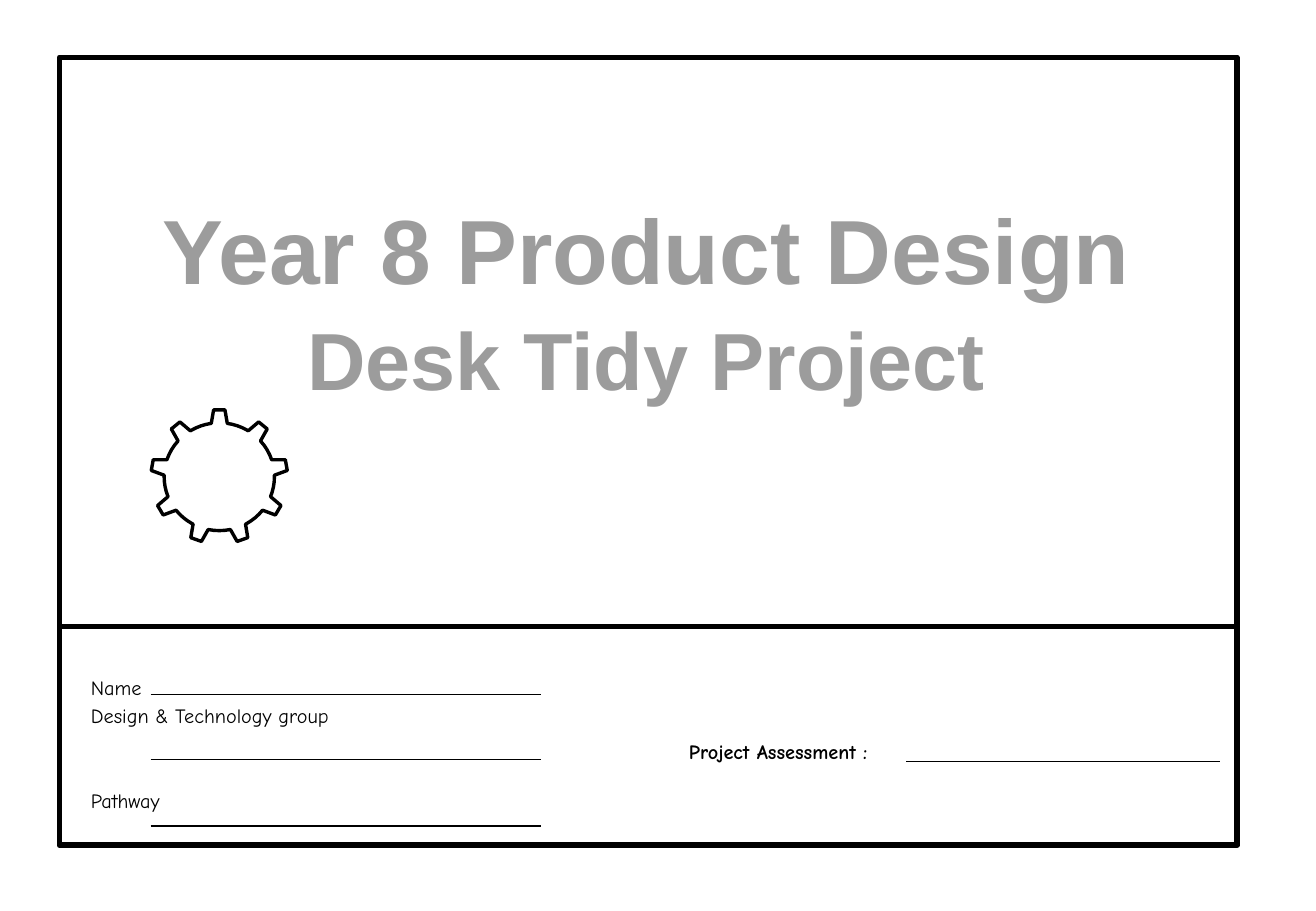
from lxml import etree
from pptx import Presentation
from pptx.dml.color import RGBColor
from pptx.enum.shapes import MSO_CONNECTOR, MSO_SHAPE
from pptx.enum.text import MSO_ANCHOR, PP_ALIGN
from pptx.oxml.ns import qn
from pptx.util import Inches, Pt

RECT, GEAR = MSO_SHAPE.RECTANGLE, MSO_SHAPE.GEAR_9
STRAIGHT = MSO_CONNECTOR.STRAIGHT
TOP = MSO_ANCHOR.TOP
LEFT, CENTER = PP_ALIGN.LEFT, PP_ALIGN.CENTER
COLORS = {"ink": "000000", "paper": "FFFFFF", "title": "9C9C9C"}
TITLE_FONT, FORM_FONT = "Arial", "Comic Neue"


def color(name):
    """Return a named colour."""
    return RGBColor.from_string(COLORS[name])


def add_outline(slide, kind, box, width, fill=None):
    """Draw a black outlined shape, filled on request."""
    shape = slide.shapes.add_shape(kind, *map(Inches, box))
    shape.shadow.inherit = False
    if fill:
        shape.fill.solid()
        shape.fill.fore_color.rgb = color(fill)
    else:
        shape.fill.background()
    shape.line.color.rgb = color("ink")
    shape.line.width = Pt(width)


def add_rule(slide, left, right, y):
    """Draw a thin line to write on."""
    rule = slide.shapes.add_connector(
        STRAIGHT, Inches(left), Inches(y), Inches(right), Inches(y))
    rule.line.color.rgb = color("ink")
    rule.line.width = Pt(0.75)
    etree.SubElement(rule._element.spPr, qn("a:effectLst"))


def add_text(slide, box, rows, font, ink, bold, align, inset):
    """Write rows of text, size and space before into a box."""
    frame = slide.shapes.add_textbox(*map(Inches, box)).text_frame
    frame.word_wrap = True
    frame.vertical_anchor = TOP
    frame.margin_left = frame.margin_right = Inches(inset)
    frame.margin_top = frame.margin_bottom = Inches(0.05)
    frame.text = "\n".join(row[0] for row in rows)
    for para, (_, size, gap) in zip(frame.paragraphs, rows):
        para.alignment = align
        para.space_before = Pt(gap)
        for run in para.runs:
            run.font.name = font
            run.font.size = Pt(size)
            run.font.bold = bold
            run.font.color.rgb = color(ink)


def add_cover(slide, left, top, width, height):
    """Place the frame, the title and the gear."""
    add_outline(slide, RECT, (left, top, width, height), 3)
    rows = [("Year 8 Product Design", 54, 0), ("Desk Tidy Project", 48, 4)]
    add_text(slide, (left + 0.71, top + 1.07, 8.24, 1.8), rows,
             TITLE_FONT, "title", True, CENTER, 0)
    add_outline(slide, GEAR, (left + 0.75, top + 2.9, 1.13, 1.11), 2, "paper")


def add_form(slide, left, top, width, height):
    """Place the panel with pupil details and assessment."""
    add_outline(slide, RECT, (left, top, width, height), 3)
    rows = [("Name", 12, 2.4), ("Design & Technology group", 12, 2.4),
            ("Pathway", 12, 36)]
    add_text(slide, (left + 0.16, top + 0.35, 4.61, 1.39), rows,
             FORM_FONT, "ink", False, LEFT, 0.1)
    for drop in (0.56, 1.09, 1.64):
        add_rule(slide, left + 0.75, left + 3.96, top + drop)
    add_text(slide, (left + 5.08, top + 0.88, 1.85, 0.35),
             [("Project Assessment :", 12, 2.4)],
             FORM_FONT, "ink", True, LEFT, 0.1)
    add_rule(slide, left + 6.97, left + 9.55, top + 1.11)


def main():
    """Build the cover slide."""
    deck = Presentation()
    deck.slide_width, deck.slide_height = Inches(10.83), Inches(7.5)
    slide = deck.slides.add_slide(deck.slide_layouts[6])
    add_cover(slide, 0.49, 0.47, 9.69, 6.48)
    add_form(slide, 0.49, 5.16, 9.69, 1.8)
    deck.save("out.pptx")


if __name__ == "__main__":
    main()
